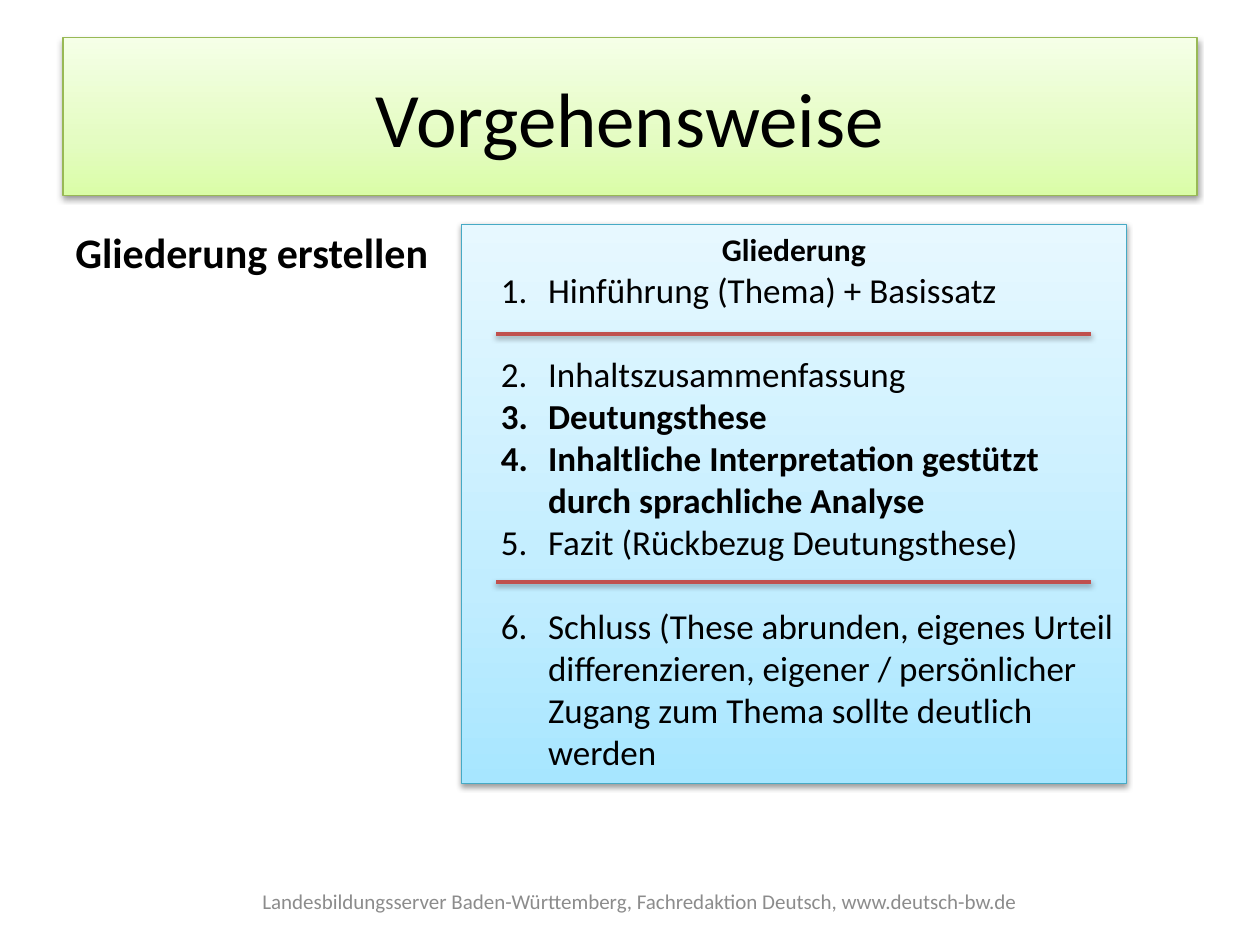
from copy import deepcopy
from dataclasses import dataclass

from lxml import etree
from pptx import Presentation
from pptx.dml.color import RGBColor
from pptx.enum.shapes import MSO_CONNECTOR, MSO_SHAPE
from pptx.enum.text import MSO_ANCHOR, PP_ALIGN
from pptx.oxml.ns import qn
from pptx.util import Cm, Pt

RECT = MSO_SHAPE.RECTANGLE
STRAIGHT = MSO_CONNECTOR.STRAIGHT
TOP, MIDDLE = MSO_ANCHOR.TOP, MSO_ANCHOR.MIDDLE
LEFT, CENTER = PP_ALIGN.LEFT, PP_ALIGN.CENTER

FONT = "Calibri"
BLACK = RGBColor(0x00, 0x00, 0x00)
GRAY = RGBColor(0x8C, 0x8C, 0x8C)
RED = RGBColor(0xC0, 0x50, 0x4D)
GREEN_LINE = RGBColor(0x98, 0xB9, 0x55)
BLUE_LINE = RGBColor(0x46, 0xAA, 0xC5)
GREENS = (RGBColor(0xDA, 0xFD, 0xA7), RGBColor(0xE4, 0xFC, 0xC2), RGBColor(0xF5, 0xFF, 0xE7))
BLUES = (RGBColor(0xA7, 0xE6, 0xFF), RGBColor(0xC1, 0xED, 0xFF), RGBColor(0xE7, 0xF8, 0xFF))
STOPS = (0, 0.35, 1)


@dataclass
class Item:
    text: str
    bold: bool = False
    gap_after: int = 0


ITEMS = [
    Item("Hinführung (Thema) + Basissatz", gap_after=24),
    Item("Inhaltszusammenfassung"),
    Item("Deutungsthese", bold=True),
    Item("Inhaltliche Interpretation gestützt durch sprachliche Analyse", bold=True),
    Item("Fazit (Rückbezug Deutungsthese)", gap_after=24),
    Item("Schluss (These abrunden, eigenes Urteil differenzieren, eigener / "
         "persönlicher Zugang zum Thema sollte deutlich werden"),
]
DIVIDERS_Y = (6.73, 11.73)


def add_shadow(sp) -> None:
    effects = etree.SubElement(sp._element.spPr, qn("a:effectLst"))
    shadow = etree.SubElement(effects, qn("a:outerShdw"), blurRad="40000",
                              dist="20000", dir="5400000", rotWithShape="0")
    color = etree.SubElement(shadow, qn("a:srgbClr"), val="000000")
    etree.SubElement(color, qn("a:alpha"), val="38000")


def style_panel(sp, colors: tuple, line: RGBColor) -> None:
    """Give a shape a three-stop upward gradient, a thin outline and a shadow."""
    sp.fill.gradient()
    sp.fill.gradient_angle = 90
    stop_list = sp._element.spPr.find(qn("a:gradFill")).find(qn("a:gsLst"))
    stop_list.insert(1, deepcopy(stop_list[0]))
    for stop, position, color in zip(sp.fill.gradient_stops, STOPS, colors):
        stop.color.rgb = color
        stop.position = position
    sp.line.color.rgb = line
    sp.line.width = Pt(0.75)
    add_shadow(sp)


def write(p, text: str, size: int, bold: bool = False,
          color: RGBColor = BLACK, align=LEFT) -> None:
    p.alignment = align
    r = p.add_run()
    r.text = text
    r.font.name = FONT
    r.font.size = Pt(size)
    r.font.bold = bold
    r.font.color.rgb = color


def number(p) -> None:
    pPr = p._p.get_or_add_pPr()
    pPr.set("marL", str(Cm(1.5)))
    pPr.set("indent", str(-Cm(0.95)))
    etree.SubElement(pPr, qn("a:buFont"), typeface="+mj-lt")
    etree.SubElement(pPr, qn("a:buAutoNum"), type="arabicPeriod")


def add_text_box(s, left: float, top: float, width: float, height: float, anchor):
    tf = s.shapes.add_textbox(Cm(left), Cm(top), Cm(width), Cm(height)).text_frame
    tf.word_wrap = True
    tf.vertical_anchor = anchor
    return tf


def add_title(s) -> None:
    title = s.shapes.title
    title.left, title.top, title.width, title.height = Cm(1.27), Cm(0.76), Cm(22.86), Cm(3.18)
    style_panel(title, GREENS, GREEN_LINE)
    title.text_frame.vertical_anchor = MIDDLE
    write(title.text_frame.paragraphs[0], "Vorgehensweise", 44, align=CENTER)


def add_outline(s) -> None:
    panel = s.shapes.add_shape(RECT, Cm(9.3), Cm(4.52), Cm(13.41), Cm(11.28))
    style_panel(panel, BLUES, BLUE_LINE)
    tf = panel.text_frame
    tf.word_wrap = True
    tf.vertical_anchor = TOP
    write(tf.paragraphs[0], "Gliederung", 18, bold=True, align=CENTER)
    for item in ITEMS:
        p = tf.add_paragraph()
        write(p, item.text, 20, item.bold)
        p.space_after = Pt(item.gap_after)
        number(p)


def add_divider(s, y: float) -> None:
    line = s.shapes.add_connector(STRAIGHT, Cm(10), Cm(y), Cm(22), Cm(y))
    line.line.color.rgb = RED
    line.line.width = Pt(2)
    add_shadow(line)


def main() -> None:
    prs = Presentation()
    prs.slide_width, prs.slide_height = Cm(25.4), Cm(19.05)
    s = prs.slides.add_slide(prs.slide_layouts[5])
    add_title(s)
    body = add_text_box(s, 1.27, 4.45, 22.86, 10.49, TOP)
    write(body.paragraphs[0], "Gliederung erstellen", 24, bold=True)
    add_outline(s)
    for y in DIVIDERS_Y:
        add_divider(s, y)
    footer = add_text_box(s, 3.1, 17.65, 19.6, 1.02, MIDDLE)
    write(footer.paragraphs[0],
          "Landesbildungsserver Baden-Württemberg, Fachredaktion Deutsch, www.deutsch-bw.de",
          12, color=GRAY, align=CENTER)
    prs.save("out.pptx")


if __name__ == "__main__":
    main()
